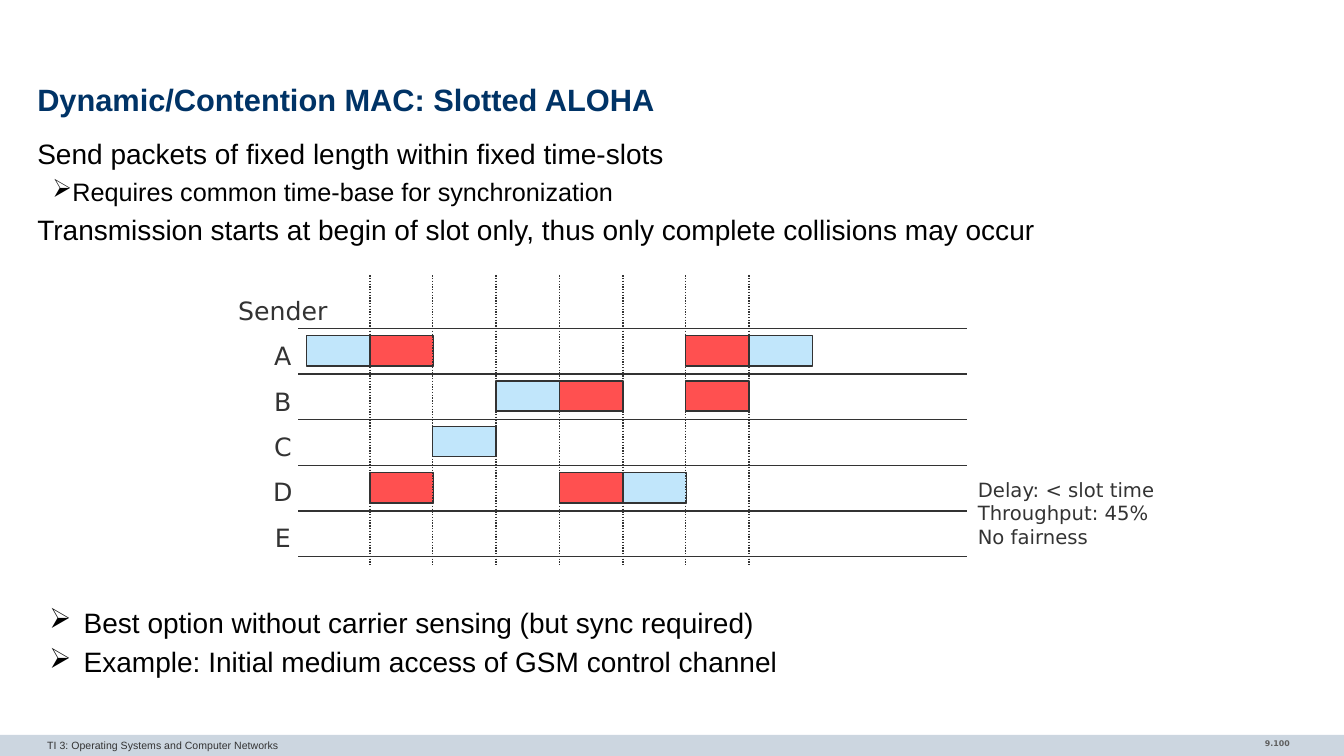
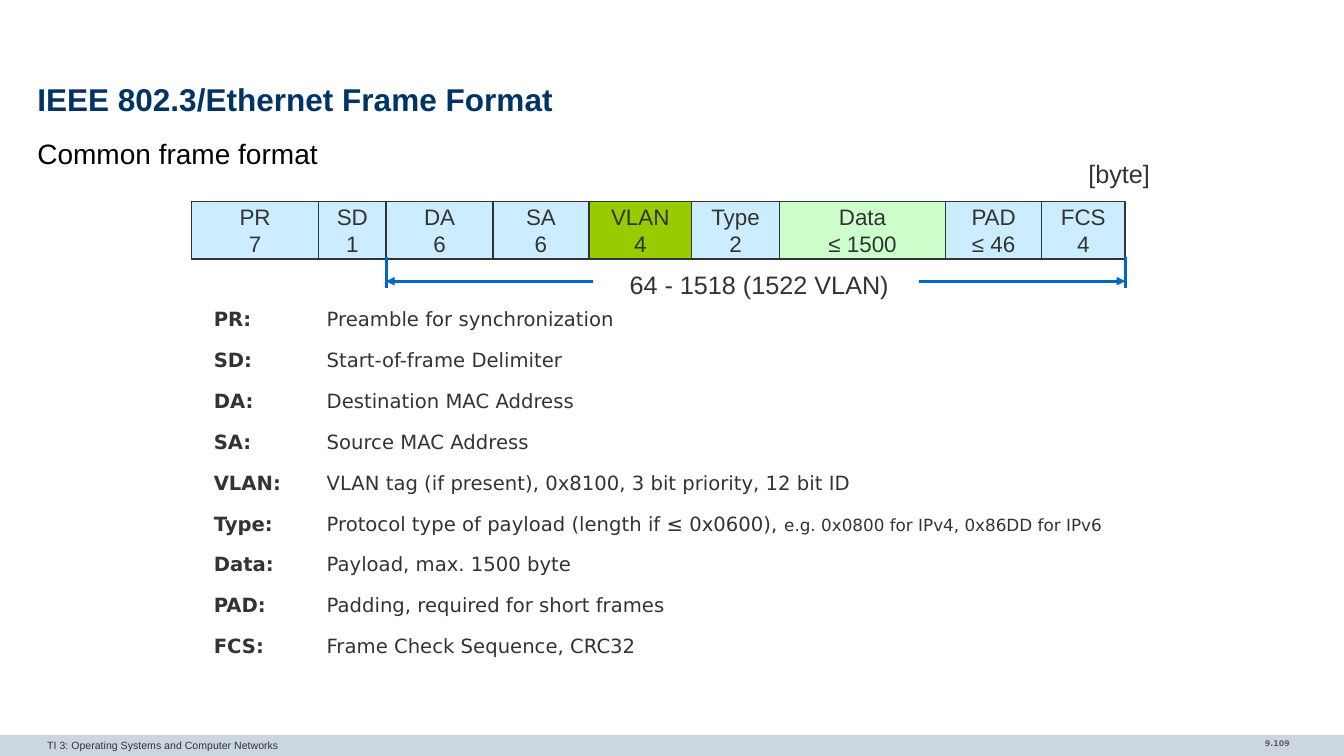
from dataclasses import dataclass, replace

from lxml import etree
from pptx import Presentation
from pptx.dml.color import RGBColor
from pptx.enum.dml import MSO_LINE_DASH_STYLE as Dash
from pptx.enum.shapes import MSO_CONNECTOR_TYPE as Connector, MSO_SHAPE as Shape
from pptx.enum.text import MSO_ANCHOR as Anchor, PP_ALIGN as Align
from pptx.oxml.ns import qn
from pptx.util import Pt

PX = 9144  # EMU; 100 px make one inch
SLIDE_SIZE = (1333, 750)

# Shared colours and fonts
INK, NAVY, BLACK, WHITE, GREY = "333333", "003366", "000000", "FFFFFF", "5F5F5F"
BAND, BLUE, SKY, RED = "CCD6E0", "0066CC", "C1E6FB", "FF5050"
ICE, MINT, LIME = "CCECFF", "CCFFCC", "99CC00"
SANS, DEJAVU = "Arial", "DejaVu Sans"


@dataclass(frozen=True)
class Style:
    size: float
    color: str = INK
    font: str = SANS
    bold: bool = False
    align: Align = Align.LEFT
    spacing: float = 1.0
    before: float = 0
    bullet: tuple = ()  # left margin and hanging indent in px


# Shared text styles
TITLE = Style(22, NAVY, bold=True, spacing=0.85)
BODY = Style(20, BLACK, spacing=1.02, before=3.8)
SUBPOINT = replace(BODY, size=18, bullet=(29, 14))
BULLET = replace(BODY, bullet=(46, 34))
FOOTER = Style(7.5)
PAGE_NUMBER = Style(5.6, GREY, DEJAVU, True, Align.RIGHT)
CAPTION = Style(18, align=Align.CENTER)
FIELD = Style(16, align=Align.CENTER)
SENDER = Style(18, font=DEJAVU, align=Align.CENTER, spacing=1.5)
NOTE = Style(14, font=DEJAVU)
TERM = replace(NOTE, bold=True)


def px(*lengths):
    return [length * PX for length in lengths]


def rgb(hex_color):
    return RGBColor.from_string(hex_color)


def paint(fill, color):
    fill.solid()
    fill.fore_color.rgb = rgb(color)


# Text
def style_paragraph(para, style, first):
    para.alignment = style.align
    if style.bullet:
        margin, hanging = style.bullet
        props = para._p.get_or_add_pPr()
        props.set("marL", str(margin * PX))
        props.set("indent", str(-hanging * PX))
        etree.SubElement(props, qn("a:buChar")).set("char", "➢")
    para.line_spacing = style.spacing
    para.space_before = Pt(0 if first else style.before)
    font = para.font
    font.size, font.name, font.bold = Pt(style.size), style.font, style.bold
    font.color.rgb = rgb(style.color)


def write(frame, lines, style):
    """Fill a frame; a line is a string, or a string with its own style."""
    frame.word_wrap = True
    for index, line in enumerate(lines):
        text, line_style = (line, style) if isinstance(line, str) else line
        para = frame.add_paragraph() if index else frame.paragraphs[0]
        style_paragraph(para, line_style, index == 0)
        para.add_run().text = text


def add_text(page, place, lines, style, inset=True, anchor=Anchor.TOP):
    frame = page.shapes.add_textbox(*px(*place)).text_frame
    frame.vertical_anchor = anchor
    if not inset:
        frame.margin_left = frame.margin_right = 0
        frame.margin_top = frame.margin_bottom = 0
    write(frame, lines, style)


# Shapes and lines
def add_box(page, place, color, outlined=True):
    box = page.shapes.add_shape(Shape.RECTANGLE, *px(*place))
    box.shadow.inherit = False
    paint(box.fill, color)
    if outlined:
        box.line.color.rgb = rgb(INK)
        box.line.width = Pt(1)
    else:
        box.line.fill.background()
    return box


def add_line(page, ends, color=INK, width=1, dash=None, arrow=False):
    connector = page.shapes.add_connector(Connector.STRAIGHT, *px(*ends))
    connector.line.color.rgb = rgb(color)
    connector.line.width = Pt(width)
    if dash:
        connector.line.dash_style = dash
    if arrow:
        outline = connector.line._get_or_add_ln()
        etree.SubElement(outline, qn("a:tailEnd")).set("type", "triangle")
    etree.SubElement(connector._element.spPr, qn("a:effectLst"))


def add_page(deck, title, number, title_style=TITLE):
    page = deck.slides.add_slide(deck.slide_layouts[6])
    add_box(page, (0, 729, SLIDE_SIZE[0], 21), BAND, outlined=False)
    add_text(page, (1110, 728, 179, 23), [number], PAGE_NUMBER)
    add_text(page, (37, 728, 872, 22),
             ["TI 3: Operating Systems and Computer Networks"], FOOTER)
    add_text(page, (37, 78, 1260, 47), [title], title_style,
             inset=False, anchor=Anchor.MIDDLE)
    return page


# Slotted ALOHA timing diagram
def lane_y(lane):
    return round(326 + 45.2 * lane)


def slot_x(slot):
    return round(304 + 62.7 * slot)


def add_timing_diagram(page):
    senders = "ABCDE"
    packets = {  # sender: slots sent alone, slots with a collision
        "A": ((0, 7), (1, 6)),
        "B": ((3,), (4, 6)),
        "C": ((2,), ()),
        "D": ((5,), (1, 4)),
    }
    for lane in range(len(senders) + 1):
        add_line(page, (296, lane_y(lane), 959, lane_y(lane)))
    add_text(page, (216, 273, 129, 281), ["Sender", *senders], SENDER)
    for sender, slot_groups in packets.items():
        top = lane_y(senders.index(sender)) + 7
        for slots, color in zip(slot_groups, (SKY, RED)):
            for slot in slots:
                add_box(page, (slot_x(slot), top, 63, 30), color)
    for slot in range(1, 8):
        add_line(page, (slot_x(slot), 273, slot_x(slot), 560),
                 dash=Dash.ROUND_DOT)


def build_aloha(deck):
    page = add_page(deck, "Dynamic/Contention MAC: Slotted ALOHA", "9.100")
    add_text(page, (37, 135, 1260, 120), [
        "Send packets of fixed length within fixed time-slots",
        ("Requires common time-base for synchronization", SUBPOINT),
        "Transmission starts at begin of slot only, "
        "thus only complete collisions may occur",
    ], BODY, inset=False)
    add_timing_diagram(page)
    add_text(page, (960, 469, 220, 81),
             ["Delay: < slot time", "Throughput: 45%", "No fairness"], NOTE)
    add_text(page, (37, 600, 1260, 90), [
        "Best option without carrier sensing (but sync required)",
        "Example: Initial medium access of GSM control channel",
    ], BULLET, inset=False)


# Ethernet frame
def add_frame_fields(page):
    fields = [
        ("PR", "7", 126, ICE), ("SD", "1", 67, ICE), ("DA", "6", 106, ICE),
        ("SA", "6", 95, ICE), ("VLAN", "4", 102, LIME), ("Type", "2", 87, ICE),
        ("Data", "≤ 1500", 165, MINT), ("PAD", "≤ 46", 95, ICE),
        ("FCS", "4", 83, ICE),
    ]
    left = 190
    for name, size, width, color in fields:
        frame = add_box(page, (left, 200, width, 57), color).text_frame
        frame.vertical_anchor = Anchor.MIDDLE
        write(frame, [name, size], FIELD)
        left += width


def add_length_marker(page):
    add_text(page, (600, 262, 306, 40), ["64 - 1518 (1522 VLAN)"], CAPTION)
    for inner, outer in ((588, 383), (911, 1116)):
        add_line(page, (outer, 255, outer, 286), BLUE, 2)
        add_line(page, (inner, 279, outer, 279), BLUE, 2, arrow=True)


def add_field_table(page):
    rows = [
        ("PR:", "Preamble for synchronization"),
        ("SD:", "Start-of-frame Delimiter"),
        ("DA:", "Destination MAC Address"),
        ("SA:", "Source MAC Address"),
        ("VLAN:", "VLAN tag (if present), 0x8100, 3 bit priority, 12 bit ID"),
        ("Type:", "Protocol type of payload (length if ≤ 0x0600), "),
        ("Data:", "Payload, max. 1500 byte"),
        ("PAD:", "Padding, required for short frames"),
        ("FCS:", "Frame Check Sequence, CRC32"),
    ]
    table = page.shapes.add_table(len(rows), 2, *px(202, 301, 921, 365)).table
    table.first_row = table.horz_banding = False
    for column, width in zip(table.columns, px(112, 809)):
        column.width = width
    for row, texts in zip(table.rows, rows):
        for cell, text, style in zip(row.cells, texts, (TERM, NOTE)):
            paint(cell.fill, WHITE)
            write(cell.text_frame, [text], style)
    # Smaller example after the protocol type
    span = table.cell(5, 1).text_frame.paragraphs[0].add_run()
    span.text = "e.g. 0x0800 for IPv4, 0x86DD for IPv6"
    span.font.size = Pt(12)


def build_ethernet(deck):
    page = add_page(deck, "IEEE 802.3/Ethernet Frame Format", "9.109",
                    replace(TITLE, size=22.5))
    add_text(page, (37, 135, 1000, 40), ["Common frame format"], BODY,
             inset=False)
    add_text(page, (1060, 152, 100, 40), ["[byte]"], CAPTION)
    add_frame_fields(page)
    add_length_marker(page)
    add_field_table(page)


def main():
    deck = Presentation()
    deck.slide_width, deck.slide_height = px(*SLIDE_SIZE)
    build_aloha(deck)
    build_ethernet(deck)
    deck.save("out.pptx")


if __name__ == "__main__":
    main()
